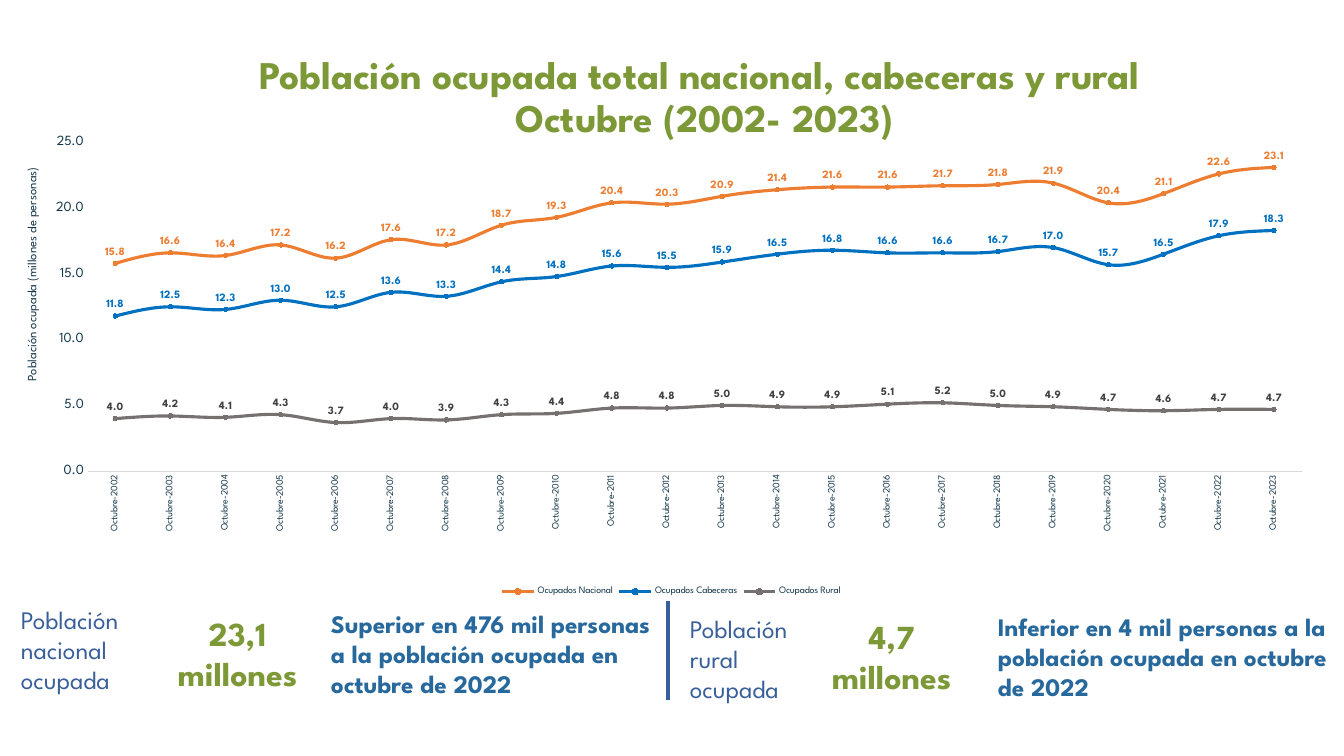
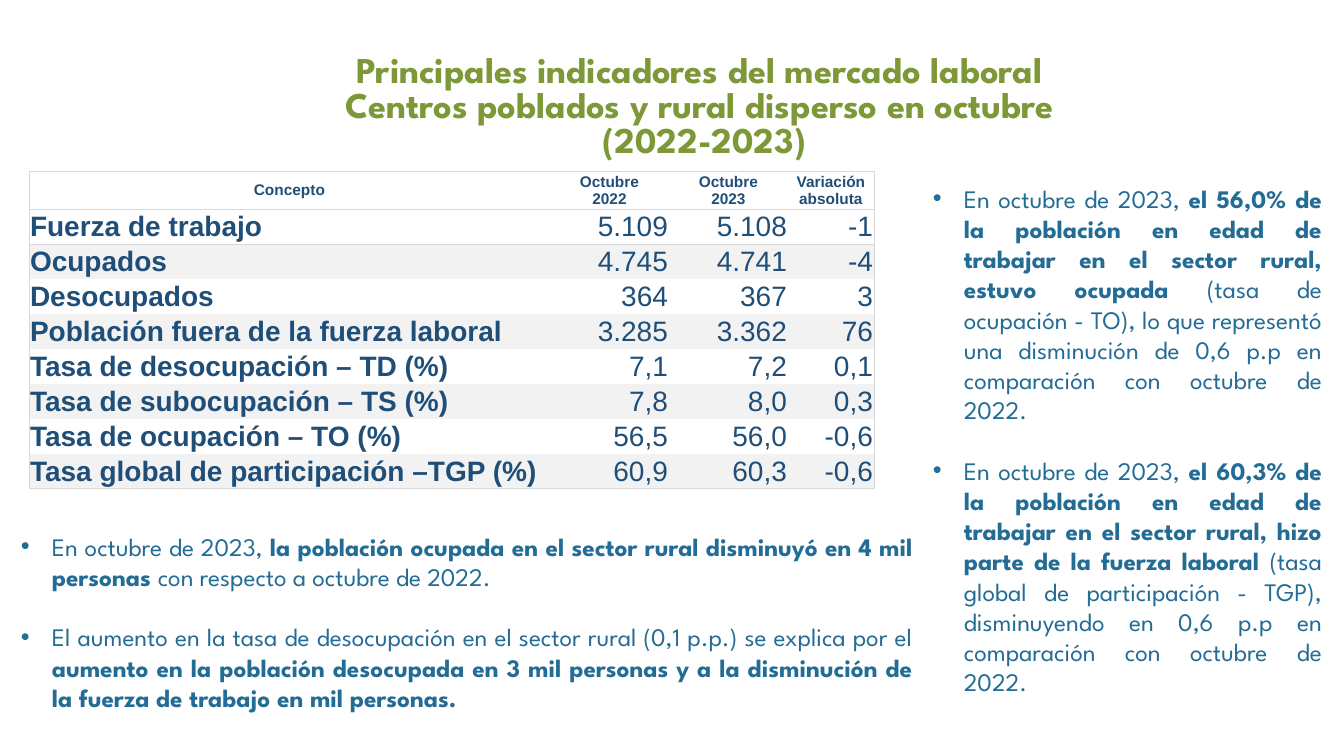
from lxml.etree import SubElement
from pptx import Presentation
from pptx.chart.data import CategoryChartData as Data
from pptx.dml.color import RGBColor as RGB
from pptx.enum.chart import XL_CHART_TYPE as Kind
from pptx.enum.chart import XL_LABEL_POSITION as Spot
from pptx.enum.chart import XL_LEGEND_POSITION as Side
from pptx.enum.chart import XL_MARKER_STYLE as Mark
from pptx.enum.chart import XL_TICK_MARK as Tick
from pptx.enum.shapes import MSO_CONNECTOR as Link
from pptx.enum.text import MSO_ANCHOR as Anchor
from pptx.enum.text import MSO_AUTO_SIZE as Fit
from pptx.enum.text import PP_ALIGN as Align
from pptx.oxml.ns import qn
from pptx.util import Emu, Pt

HUES = {
    "green": "7D9837", "blue": "395F9B", "steel": "27689D", "teal": "236C95",
    "navy": "1F4E78", "ink": "12364A", "rule": "D9D9D9", "band": "F2F2F2",
    "white": "FFFFFF", "orange": "ED7D31", "sky": "0070C0", "gray": "767171",
    "dark": "404040",
}
SCALE = 914400 / 100.8

YEARS = range(2002, 2024)
SERIES = [
    ("Ocupados Nacional", "orange", "orange",
     [15.8, 16.6, 16.4, 17.2, 16.2, 17.6, 17.2, 18.7, 19.3, 20.4, 20.3,
      20.9, 21.4, 21.6, 21.6, 21.7, 21.8, 21.9, 20.4, 21.1, 22.6, 23.1]),
    ("Ocupados Cabeceras", "sky", "sky",
     [11.8, 12.5, 12.3, 13, 12.5, 13.6, 13.3, 14.4, 14.8, 15.6, 15.5,
      15.9, 16.5, 16.8, 16.6, 16.6, 16.7, 17, 15.7, 16.5, 17.9, 18.3]),
    ("Ocupados Rural", "gray", "dark",
     [4, 4.2, 4.1, 4.3, 3.7, 4, 3.9, 4.3, 4.4, 4.8, 4.8,
      5, 4.9, 4.9, 5.1, 5.2, 5, 4.9, 4.7, 4.6, 4.7, 4.7]),
]
FACTS = [
    (11, 599, "Población nacional\nocupada", "23,1 millones",
     "Superior en 476 mil personas a la población ocupada en octubre de 2022"),
    (680, 608, "Población rural\nocupada", "4,7 millones",
     "Inferior en 4 mil personas a la población ocupada en octubre de 2022"),
]
ROWS = [
    ("Concepto", "Octubre\n2022", "Octubre\n2023", "Variación absoluta"),
    ("Fuerza de trabajo", "5.109", "5.108", "-1"),
    ("Ocupados", "4.745", "4.741", "-4"),
    ("Desocupados", "364", "367", "3"),
    ("Población fuera de la fuerza laboral", "3.285", "3.362", "76"),
    ("Tasa de desocupación – TD (%)", "7,1", "7,2", "0,1"),
    ("Tasa de subocupación – TS (%)", "7,8", "8,0", "0,3"),
    ("Tasa de ocupación – TO (%)", "56,5", "56,0", "-0,6"),
    ("Tasa global de participación –TGP (%)", "60,9", "60,3", "-0,6"),
]
BELOW = [
    "En octubre de 2023, |la población ocupada en el sector rural disminuyó "
    "en 4 mil personas |con respecto a octubre de 2022.",
    "El aumento en la tasa de desocupación en el sector rural (0,1 p.p.) se "
    "explica por el |aumento en la población desocupada en 3 mil personas y a "
    "la disminución de la fuerza de trabajo en mil personas.",
]
BESIDE = [
    "En octubre de 2023, |el 56,0% de la población en edad de trabajar en el "
    "sector rural, estuvo ocupada |(tasa de ocupación - TO), lo que representó "
    "una disminución de 0,6 p.p en comparación con octubre de 2022.",
    "En octubre de 2023, |el 60,3% de la población en edad de trabajar en el "
    "sector rural, hizo parte de la fuerza laboral |(tasa global de "
    "participación - TGP), disminuyendo en 0,6 p.p en comparación con octubre "
    "de 2022.",
]


def px(num):
    return Emu(round(num * SCALE))


def hue(name):
    return RGB.from_string(HUES[name])


def lay(node, index, **spots):
    """Give a chart part a manual layout, in fractions of the chart."""
    for old in node.findall(qn("c:layout")):
        node.remove(old)
    box = SubElement(node, qn("c:layout"))
    node.insert(index, box)
    rules = SubElement(box, qn("c:manualLayout"))
    if "w" in spots:
        SubElement(rules, qn("c:layoutTarget"), val="inner")
    for key in "xy":
        SubElement(rules, qn(f"c:{key}Mode"), val="edge")
    for key, val in spots.items():
        SubElement(rules, qn(f"c:{key}"), val=str(val))


def edge(cell, lines):
    """Draw the cell borders named in lines and clear the others."""
    props = cell._tc.get_or_add_tcPr()
    for side in "LRTB":
        line = SubElement(props, qn(f"a:ln{side}"), w=str(Pt(0.5)))
        if side in lines:
            fill = SubElement(line, qn("a:solidFill"))
            SubElement(fill, qn("a:srgbClr"), val=HUES["rule"])
        else:
            SubElement(line, qn("a:noFill"))


class Deck:
    """Holds the style and the current slide."""

    face = "League Spartan"

    def __init__(self):
        self.pres = Presentation()
        self.pres.slide_width, self.pres.slide_height = px(1344), px(756)
        self.slide = None

    def font(self, font, size, color, bold=None, face=None):
        font.name = face or self.face
        font.size = Pt(size)
        font.color.rgb = hue(color)
        font.bold = bold

    def page(self, title, size, space):
        self.slide = self.pres.slides.add_slide(self.pres.slide_layouts[5])
        head = self.slide.shapes.title
        head.left, head.top, head.width, head.height = map(px, (205, 51, 999, 120))
        frame = head.text_frame
        frame.text = title
        frame.word_wrap = True
        frame.auto_size = Fit.NONE
        frame.vertical_anchor = Anchor.TOP
        for para in frame.paragraphs:
            para.alignment = Align.CENTER
            para.line_spacing = space
            self.font(para.font, size, "green", True)

    def frame(self, *area):
        frame = self.slide.shapes.add_textbox(*map(px, area)).text_frame
        frame.word_wrap = True
        return frame

    def text(self, area, words, size, color, bold=False, align=Align.LEFT):
        frame = self.frame(*area)
        frame.text = words
        for para in frame.paragraphs:
            para.alignment = align
            self.font(para.font, size, color, bold)

    def list(self, area, items):
        """Add bullets; each | in an item switches bold on or off."""
        frame = self.frame(*area)
        for i, item in enumerate(items):
            para = frame.add_paragraph() if i else frame.paragraphs[0]
            props = para._p.get_or_add_pPr()
            props.set("marL", str(px(31)))
            props.set("indent", str(-px(31)))
            SubElement(props, qn("a:buFont"), typeface="Arial")
            SubElement(props, qn("a:buChar"), char="•")
            para.alignment = Align.JUSTIFY
            if i:
                para.space_before = Pt(21.6)
            self.font(para.font, 18, "teal")
            for j, part in enumerate(item.split("|")):
                run = para.add_run()
                run.text = part
                run.font.bold = j % 2 == 1

    def line(self, *ends):
        line = self.slide.shapes.add_connector(Link.STRAIGHT, *map(px, ends))
        line.line.color.rgb = hue("blue")
        line.line.width = Pt(2.25)
        SubElement(line._element.spPr, qn("a:effectLst"))

    def chart(self, area, cats, series, label):
        data = Data(number_format="0.0")
        data.categories = cats
        for name, _, _, vals in series:
            data.add_series(name, vals)
        chart = self.slide.shapes.add_chart(
            Kind.LINE_MARKERS, *map(px, area), data).chart
        self.font(chart.font, 8, "ink")
        chart.has_title = False
        chart.has_legend = True
        chart.legend.position = Side.BOTTOM
        chart.legend.include_in_layout = False
        self.font(chart.legend.font, 7, "ink")
        plot = chart.plots[0]
        plot.vary_by_categories = False
        for item, (_, color, tint, _) in zip(plot.series, series):
            self.curve(item, color, tint)
        self.axes(chart, label)
        lay(chart.element.xpath(".//c:plotArea")[0], 0,
            x=0.058, y=0.018, w=0.919, h=0.706)

    def curve(self, item, color, tint):
        item.smooth = True
        item.format.line.color.rgb = hue(color)
        item.format.line.width = Pt(2.25)
        mark = item.marker
        mark.style, mark.size = Mark.CIRCLE, 3
        mark.format.fill.solid()
        mark.format.fill.fore_color.rgb = hue(color)
        mark.format.line.color.rgb = hue(color)
        tags = item.data_labels
        tags.show_value = True
        tags.position = Spot.ABOVE
        tags.number_format = "0.0"
        tags.number_format_is_linked = False
        self.font(tags.font, 8, tint, True)

    def axes(self, chart, label):
        cat, val = chart.category_axis, chart.value_axis
        for axis, size in ((cat, 7), (val, 10)):
            axis.major_tick_mark = axis.minor_tick_mark = Tick.NONE
            axis.has_major_gridlines = False
            self.font(axis.tick_labels.font, size, "ink")
        cat.format.line.color.rgb = hue("rule")
        cat.format.line.width = Pt(0.75)
        val.format.line.fill.background()
        val.minimum_scale, val.maximum_scale, val.major_unit = 0, 25, 5
        val.tick_labels.number_format = "0.0"
        val.tick_labels.number_format_is_linked = False
        frame = val.axis_title.text_frame
        frame.text = label
        self.font(frame.paragraphs[0].font, 9, "ink", False)
        lay(chart.element.xpath(".//c:valAx/c:title")[0], 1, x=0.01, y=0.067)
        turned = ".//c:catAx/c:txPr/a:bodyPr | .//c:valAx/c:title//a:bodyPr"
        for body in chart.element.xpath(turned):
            body.set("rot", "-5400000")
            body.set("vert", "horz")

    def table(self, left, top, cols, highs, rows):
        area = left, top, sum(cols), sum(highs)
        grid = self.slide.shapes.add_table(
            len(rows), len(cols), *map(px, area)).table
        for col, wide in zip(grid.columns, cols):
            col.width = px(wide)
        for r, (row, high) in enumerate(zip(rows, highs)):
            grid.rows[r].height = px(high)
            for c, words in enumerate(row):
                cell = grid.cell(r, c)
                sides = {"L": c == 0, "R": c == len(cols) - 1,
                         "T": r <= 2, "B": r < 2 or r == len(rows) - 1}
                edge(cell, [key for key, on in sides.items() if on])
                self.cell(cell, words, r, c)

    def cell(self, cell, words, r, c):
        cell.fill.solid()
        cell.fill.fore_color.rgb = hue("band" if r and r % 2 == 0 else "white")
        cell.margin_left = cell.margin_right = cell.margin_top = px(1)
        cell.margin_bottom = 0
        cell.vertical_anchor = Anchor.MIDDLE
        cell.text_frame.text = words
        align = Align.RIGHT if c else Align.LEFT
        for para in cell.text_frame.paragraphs:
            para.alignment = align if r else Align.CENTER
            self.font(para.font, 20 if r else 11, "navy",
                      r == 0 or c == 0, "Arial")


def main():
    deck = Deck()
    deck.page("Población ocupada total nacional, cabeceras y rural \n"
              "Octubre (2002- 2023)", 28, 0.9)
    for left, top, group, count, note in FACTS:
        deck.text((left, top, 162, 102), group, 18, "blue")
        deck.text((left + (141 if left < 100 else 126), top + (9 if left < 100 else 3),
                   171, 92), count, 24, "green", True, Align.CENTER)
        deck.text((left + (310 if left < 100 else 308), top + (4 if left < 100 else -2),
                   354, 102), note, 18, "steel", True)
    deck.line(668, 601, 668, 700)
    deck.chart((11, 134, 1321, 466), [f"Octubre-{year}" for year in YEARS],
               SERIES, "Población ocupada (millones de personas)")

    deck.page("Principales indicadores del mercado laboral \n"
              "Centros poblados y rural disperso en octubre \n(2022-2023)",
              25.9, 0.8)
    deck.list((11, 526, 912, 194), BELOW)
    deck.table(29, 171, (521, 119, 119, 86), [37] + [35] * 8, ROWS)
    deck.list((923, 178, 409, 529), BESIDE)
    deck.pres.save("out.pptx")


if __name__ == "__main__":
    main()
